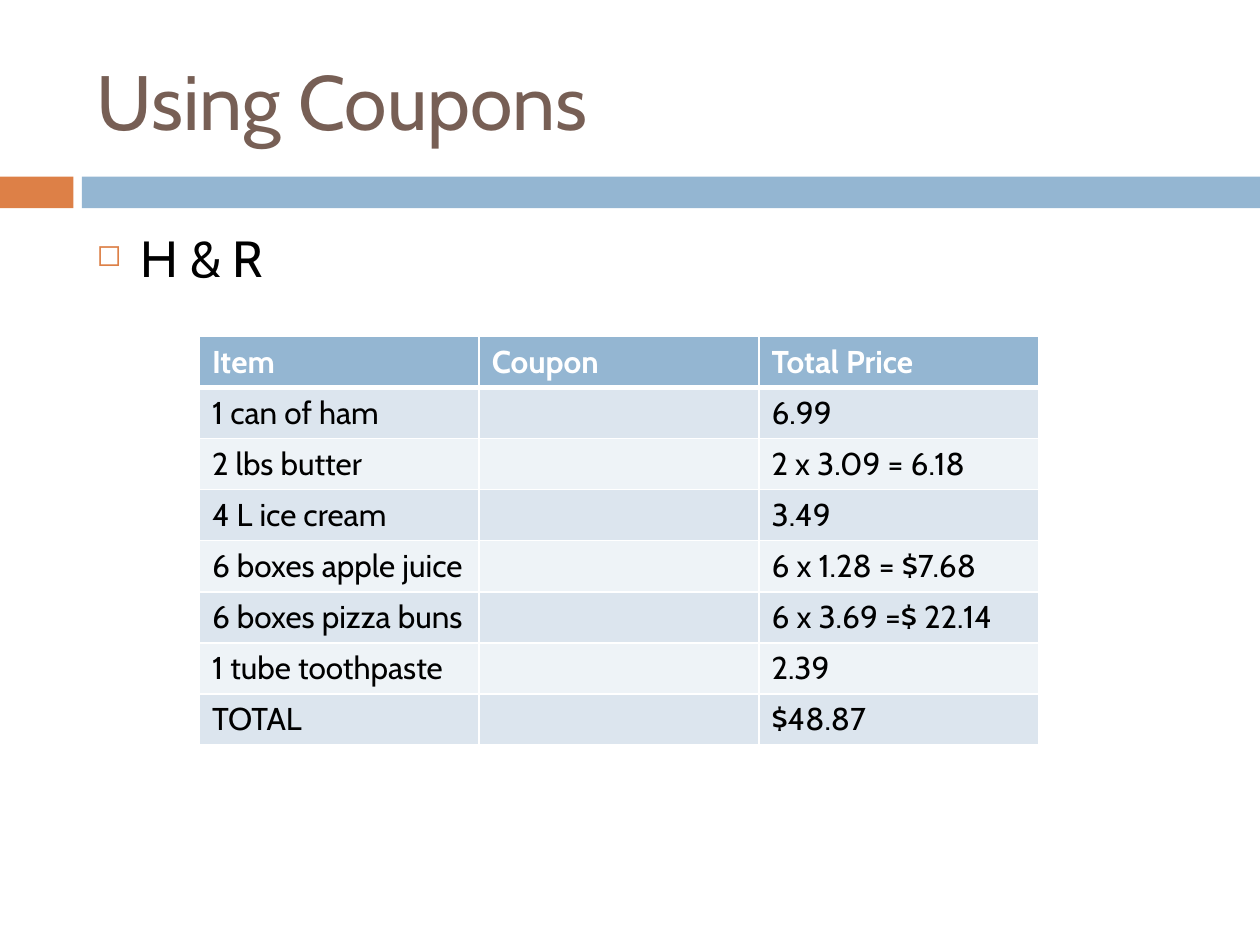
import dataclasses

import lxml.etree
import pptx
import pptx.dml.color
import pptx.enum.shapes
import pptx.enum.text
import pptx.oxml.ns
import pptx.util

Cm = pptx.util.Cm
FONT = "Cabin"
COLORS = {
    "orange": "DD8047",
    "blue": "94B6D2",
    "brown": "775F55",
    "dark_band": "DCE5EE",
    "light_band": "EEF3F7",
    "white": "FFFFFF",
    "black": "000000",
}
ROWS = [
    ("Item", "Coupon", "Total Price"),
    ("1 can of ham", "", "6.99"),
    ("2 lbs butter", "", "2 x 3.09 = 6.18"),
    ("4 L ice cream", "", "3.49"),
    ("6 boxes apple juice", "", "6 x 1.28 = $7.68"),
    ("6 boxes pizza buns", "", "6 x 3.69 =$ 22.14"),
    ("1 tube toothpaste", "", "2.39"),
    ("TOTAL", "", "$48.87"),
]
COLUMN_WIDTH = 5.64
ROW_HEIGHT = 1.03


@dataclasses.dataclass(frozen=True)
class Bar:
    left: float
    width: float
    color: str


@dataclasses.dataclass(frozen=True)
class TextBlock:
    text: str
    top: float
    height: float
    size: int
    color: str
    anchor: pptx.enum.text.MSO_ANCHOR
    bulleted: bool = False


BARS = [Bar(0, 1.48, "orange"), Bar(1.65, 23.75, "blue")]
TEXT_BLOCKS = [
    TextBlock("Using Coupons", 0.64, 2.75, 44, "brown", pptx.enum.text.MSO_ANCHOR.MIDDLE),
    TextBlock("H & R", 4.45, 12.5, 29, "black", pptx.enum.text.MSO_ANCHOR.TOP, True),
]


def rgb(name: str) -> pptx.dml.color.RGBColor:
    return pptx.dml.color.RGBColor.from_string(COLORS[name])


def add_child(parent, tag: str, **attributes: str):
    return lxml.etree.SubElement(parent, pptx.oxml.ns.qn(tag), **attributes)


def style_paragraph(para, size: int, color: str, bold: bool = False) -> None:
    para.font.name = FONT
    para.font.size = pptx.util.Pt(size)
    para.font.bold = bold
    para.font.color.rgb = rgb(color)


def draw_bar(page, bar: Bar) -> None:
    shape = page.shapes.add_shape(
        pptx.enum.shapes.MSO_SHAPE.RECTANGLE,
        Cm(bar.left), Cm(3.56), Cm(bar.width), Cm(0.64),
    )
    shape.shadow.inherit = False
    shape.fill.solid()
    shape.fill.fore_color.rgb = rgb(bar.color)
    shape.line.fill.background()


def add_bullet(para) -> None:
    para.space_before = pptx.util.Pt(7)
    properties = para._p.get_or_add_pPr()
    properties.set("marL", str(Cm(0.89)))
    properties.set("indent", str(-Cm(0.89)))
    color = add_child(properties, "a:buClr")
    add_child(color, "a:srgbClr", val=COLORS["orange"])
    add_child(properties, "a:buSzPct", val="60000")
    add_child(properties, "a:buChar", char="◻")


def draw_text(page, block: TextBlock) -> None:
    box = page.shapes.add_textbox(Cm(1.7), Cm(block.top), Cm(22.66), Cm(block.height))
    frame = box.text_frame
    frame.word_wrap = True
    frame.vertical_anchor = block.anchor
    para = frame.paragraphs[0]
    para.text = block.text
    if block.bulleted:
        add_bullet(para)
    style_paragraph(para, block.size, block.color)


def add_borders(cell, top: int, bottom: int) -> None:
    properties = cell._tc.get_or_add_tcPr()
    for side, width in (("L", 1), ("R", 1), ("T", top), ("B", bottom)):
        line = add_child(properties, f"a:ln{side}", w=str(pptx.util.Pt(width)))
        fill = add_child(line, "a:solidFill")
        add_child(fill, "a:srgbClr", val=COLORS["white"])


def draw_table(page) -> None:
    column_count = len(ROWS[0])
    table = page.shapes.add_table(
        len(ROWS), column_count, Cm(4.02), Cm(6.78),
        Cm(COLUMN_WIDTH * column_count), Cm(ROW_HEIGHT * len(ROWS)),
    ).table
    for column in table.columns:
        column.width = Cm(COLUMN_WIDTH)
    for row_index, texts in enumerate(ROWS):
        table.rows[row_index].height = Cm(ROW_HEIGHT)
        is_header = row_index == 0
        band = "dark_band" if row_index % 2 else "light_band"
        for column_index, text in enumerate(texts):
            cell = table.cell(row_index, column_index)
            add_borders(cell, 3 if row_index == 1 else 1, 3 if is_header else 1)
            cell.fill.solid()
            cell.fill.fore_color.rgb = rgb("blue" if is_header else band)
            para = cell.text_frame.paragraphs[0]
            para.text = text
            style_paragraph(para, 18, "white" if is_header else "black", is_header)


def main() -> None:
    deck = pptx.Presentation()
    deck.slide_width = Cm(25.4)
    deck.slide_height = Cm(19.05)
    page = deck.slides.add_slide(deck.slide_layouts[6])
    for bar in BARS:
        draw_bar(page, bar)
    for block in TEXT_BLOCKS:
        draw_text(page, block)
    draw_table(page)
    deck.save("out.pptx")


if __name__ == "__main__":
    main()
